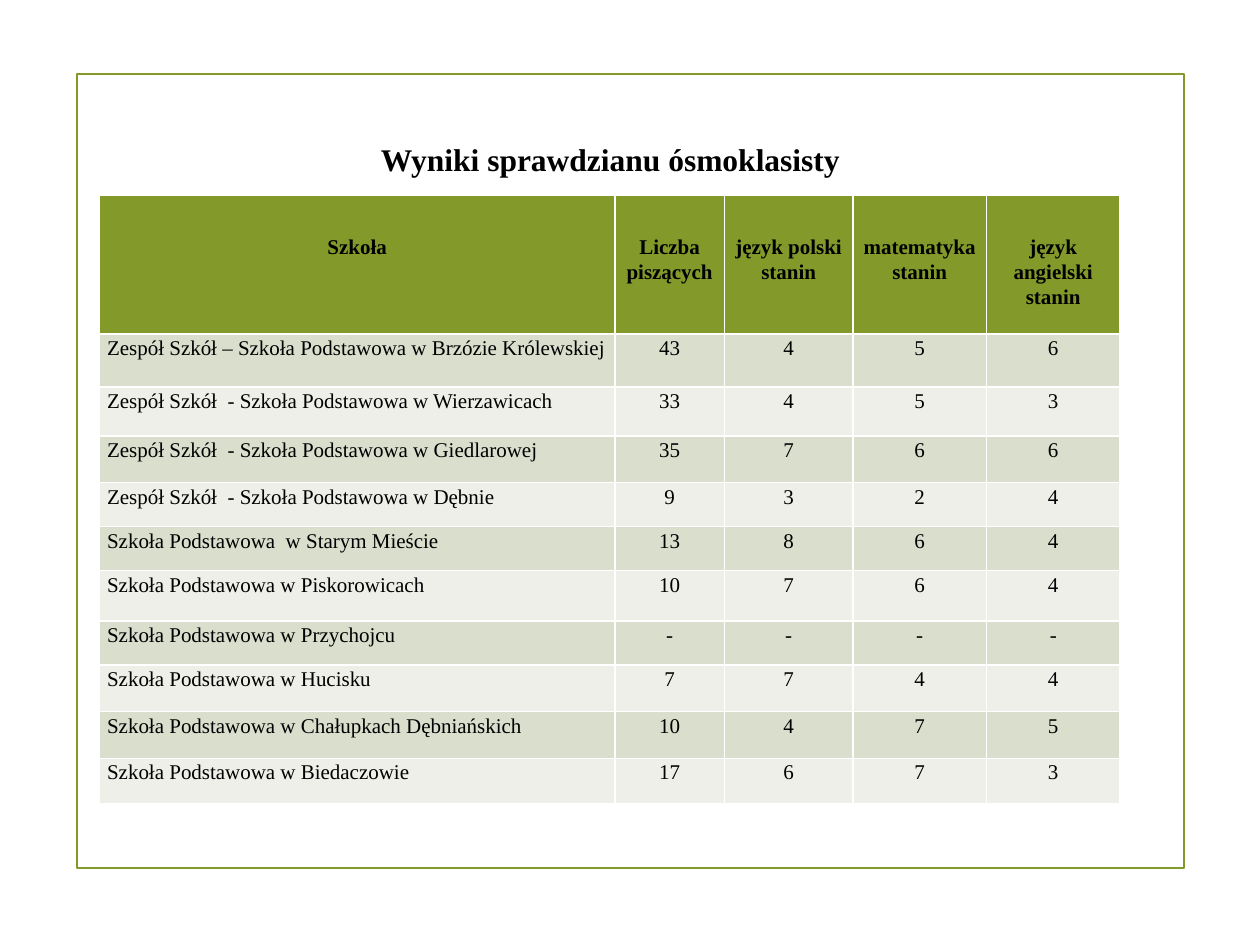
import pptx
import pptx.util
import pptx.dml.color
import pptx.enum.shapes
import pptx.enum.text

Inches, Pt = pptx.util.Inches, pptx.util.Pt
PP_ALIGN = pptx.enum.text.PP_ALIGN
MSO_ANCHOR = pptx.enum.text.MSO_ANCHOR

FONT = "Times New Roman"
GREEN, DARK_BAND, LIGHT_BAND, BLACK = "83992A", "D9DECD", "EDEFE8", "000000"

TITLE = "Wyniki sprawdzianu ósmoklasisty"
HEADER = ("Szkoła", "Liczba piszących", "język polski stanin",
          "matematyka stanin", "język angielski stanin")
RESULTS = [
    ("Zespół Szkół – Szkoła Podstawowa w Brzózie Królewskiej", 43, 4, 5, 6),
    ("Zespół Szkół  - Szkoła Podstawowa w Wierzawicach", 33, 4, 5, 3),
    ("Zespół Szkół  - Szkoła Podstawowa w Giedlarowej", 35, 7, 6, 6),
    ("Zespół Szkół  - Szkoła Podstawowa w Dębnie", 9, 3, 2, 4),
    ("Szkoła Podstawowa  w Starym Mieście", 13, 8, 6, 4),
    ("Szkoła Podstawowa w Piskorowicach", 10, 7, 6, 4),
    ("Szkoła Podstawowa w Przychojcu", "-", "-", "-", "-"),
    ("Szkoła Podstawowa w Hucisku", 7, 7, 4, 4),
    ("Szkoła Podstawowa w Chałupkach Dębniańskich", 10, 4, 7, 5),
    ("Szkoła Podstawowa w Biedaczowie", 17, 6, 7, 3),
]
COLUMN_WIDTHS = (4.09, 0.87, 1.02, 1.06, 1.06)
ROW_HEIGHTS = (1.1, 0.42, 0.39, 0.37, 0.35, 0.35, 0.4, 0.35, 0.37, 0.37, 0.36)

CELL = dict(margin_left=Inches(0.06), margin_right=Inches(0.06),
            margin_top=Inches(0.01), margin_bottom=0,
            vertical_anchor=MSO_ANCHOR.TOP)
HEADER_CELL = dict(CELL, margin_top=Inches(0.31))
CELL_PARAGRAPH = dict(line_spacing=1.07, space_after=Pt(8))
TITLE_FRAME = dict(margin_left=0, margin_right=0, margin_top=0, margin_bottom=0,
                   word_wrap=True, vertical_anchor=MSO_ANCHOR.MIDDLE)


def rgb(value):
    return pptx.dml.color.RGBColor.from_string(value)


def apply(target, formats):
    for name, value in formats.items():
        setattr(target, name, value)


def place(sp, left, top, width, height):
    apply(sp, dict(left=Inches(left), top=Inches(top),
                   width=Inches(width), height=Inches(height)))


def write(p, text, size, bold, align):
    p.text = str(text)
    p.alignment = align
    apply(p.font, dict(name=FONT, size=Pt(size), bold=bold))
    p.font.color.rgb = rgb(BLACK)


def add_frame(s):
    sp = s.shapes.add_shape(pptx.enum.shapes.MSO_SHAPE.RECTANGLE, 0, 0, 0, 0)
    place(sp, 0.61, 0.59, 8.79, 6.3)
    sp.shadow.inherit = False
    sp.fill.background()
    sp.line.color.rgb = rgb(GREEN)
    sp.line.width = Pt(1.25)


def add_title(s):
    sp = s.shapes.title
    place(sp, 0.67, 1.05, 8.35, 0.43)
    apply(sp.text_frame, TITLE_FRAME)
    write(sp.text_frame.paragraphs[0], TITLE, 18, True, PP_ALIGN.CENTER)


def add_results(s):
    rows = [HEADER] + RESULTS
    table = s.shapes.add_table(
        len(rows), len(HEADER), Inches(0.79), Inches(1.55),
        Inches(sum(COLUMN_WIDTHS)), Inches(sum(ROW_HEIGHTS))).table
    for column, width in zip(table.columns, COLUMN_WIDTHS):
        column.width = Inches(width)
    for i, (values, height) in enumerate(zip(rows, ROW_HEIGHTS)):
        is_header = i == 0
        fill = GREEN if is_header else DARK_BAND if i % 2 else LIGHT_BAND
        table.rows[i].height = Inches(height)
        for j, value in enumerate(values):
            cell = table.cell(i, j)
            apply(cell, HEADER_CELL if is_header else CELL)
            cell.fill.solid()
            cell.fill.fore_color.rgb = rgb(fill)
            centred = is_header or j > 0
            p = cell.text_frame.paragraphs[0]
            write(p, value, 12, is_header,
                  PP_ALIGN.CENTER if centred else PP_ALIGN.LEFT)
            apply(p, CELL_PARAGRAPH)


def main():
    prs = pptx.Presentation()
    apply(prs, dict(slide_width=Inches(10), slide_height=Inches(7.5)))
    s = prs.slides.add_slide(prs.slide_layouts.get_by_name("Title Only"))
    add_frame(s)
    add_title(s)
    add_results(s)
    prs.save("out.pptx")


if __name__ == "__main__":
    main()
